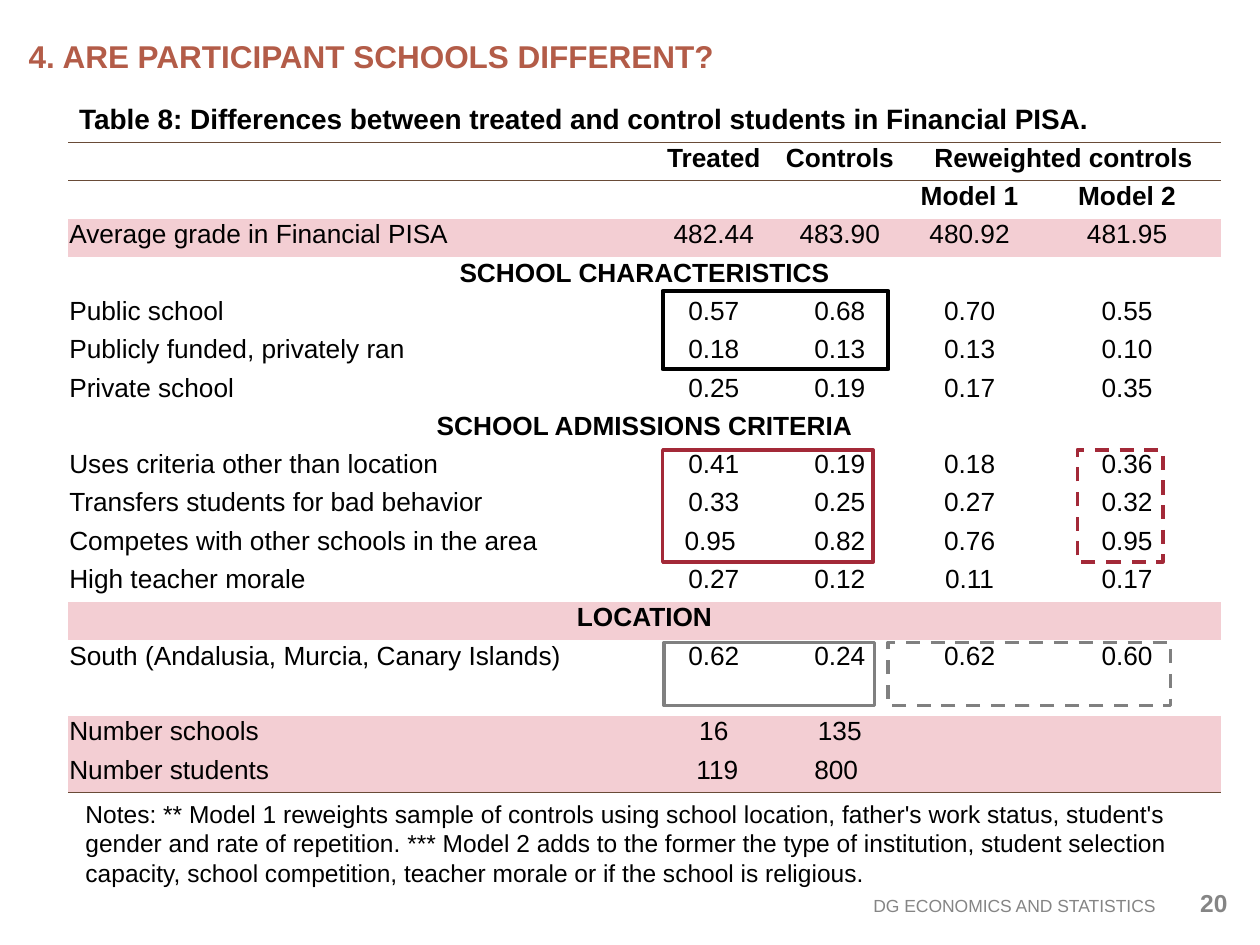
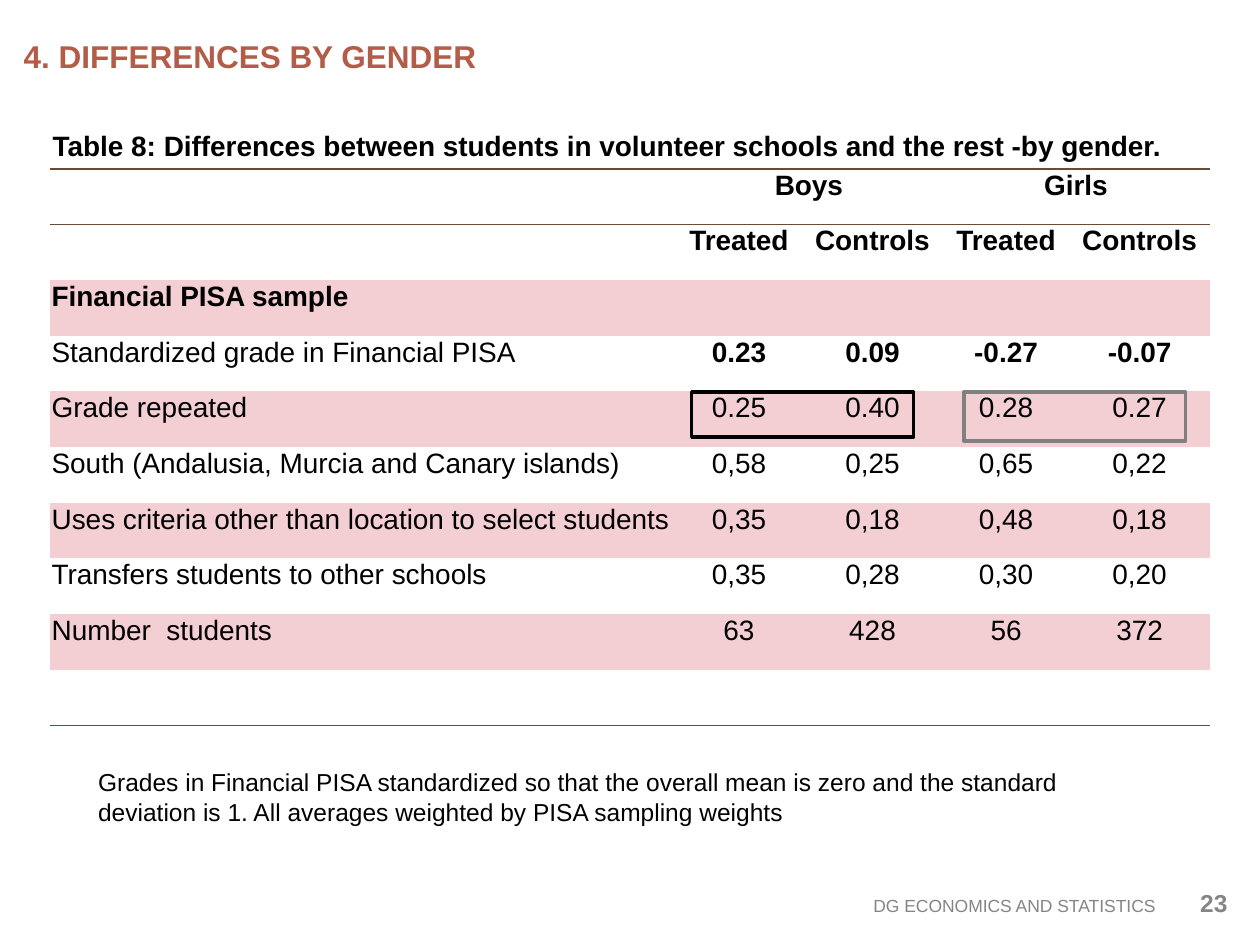
from lxml.etree import SubElement
from pptx import Presentation
from pptx.dml.color import RGBColor
from pptx.enum.dml import MSO_LINE
from pptx.enum.shapes import MSO_SHAPE
from pptx.enum.text import MSO_ANCHOR, PP_ALIGN
from pptx.oxml import parse_xml
from pptx.oxml.ns import nsdecls, qn
from pptx.util import Inches, Pt

COLORS = {
    "title": "B35C48", "text": "000000", "footer": "858585", "white": "FFFFFF",
    "band": "F3CED3", "rule": "694B37", "red": "A32938", "gray": "808080",
}
FONT = "Arial"
FOOTER = "DG ECONOMICS AND STATISTICS"
NO_STYLE = "{2D5ABB26-0587-4C30-8999-92F81FD0307C}"

ROW_STYLES = {
    "head": {"fill": "white", "bold": "all", "edges": ("T", "B")},
    "subhead": {"fill": "white", "bold": "all"},
    "section": {"bold": "all", "center": True},
    "band section": {"fill": "band", "bold": "all", "center": True},
    "band group": {"fill": "band", "bold": "all"},
    "plain": {},
    "strong": {"bold": "values"},
    "band": {"fill": "band"},
    "band last": {"fill": "band", "edges": ("B",)},
    "last": {"edges": ("B",)},
}

SLIDES = [
    {
        "title": "4. ARE PARTICIPANT SCHOOLS DIFFERENT?", "title_left": 0.13,
        "number": "20",
        "caption": "Table 8: Differences between treated and control students in Financial PISA.",
        "caption_at": (0.53, 0.76, 8.76, 0.37),
        "table_at": (0.54, 1.13, 9.15, 5.16),
        "size": 15,
        "cols": [4.65, 0.95, 1.05, 1.01, 1.49],
        "tall_rows": {13: 0.6},
        "rows": [
            ("head", ["", "Treated", "Controls", "Reweighted controls", None]),
            ("subhead", ["", "", "", "Model 1", "Model 2"]),
            ("band", ["Average grade in Financial PISA", "482.44", "483.90", "480.92", "481.95"]),
            ("section", ["SCHOOL CHARACTERISTICS", None, None, None, None]),
            ("plain", ["Public school", "0.57", "0.68", "0.70", "0.55"]),
            ("plain", ["Publicly funded, privately ran", "0.18", "0.13", "0.13", "0.10"]),
            ("plain", ["Private school", "0.25", "0.19", "0.17", "0.35"]),
            ("section", ["SCHOOL ADMISSIONS CRITERIA", None, None, None, None]),
            ("plain", ["Uses criteria other than location", "0.41", "0.19", "0.18", "0.36"]),
            ("plain", ["Transfers students for bad behavior", "0.33", "0.25", "0.27", "0.32"]),
            ("plain", ["Competes with other schools in the area", "0.95 ", "0.82", "0.76", "0.95"]),
            ("plain", ["High teacher morale", "0.27", "0.12", "0.11", "0.17"]),
            ("band section", ["LOCATION", None, None, None, None]),
            ("plain", ["South (Andalusia, Murcia, Canary Islands)", "0.62", "0.24", "0.62", "0.60"]),
            ("band", ["Number schools", "16", "135", "", ""]),
            ("band last", ["Number students", " 119", "800 ", "", ""]),
        ],
        "frames": [
            ((5.26, 3.57, 1.67, 0.89), "red", 2, False),
            ((5.27, 5.1, 1.67, 0.5), "gray", 2, False),
            ((8.55, 3.57, 0.68, 0.89), "red", 2, True),
            ((5.26, 2.31, 1.79, 0.62), "text", 2.5, False),
            ((7.05, 5.1, 2.24, 0.5), "gray", 2, True),
        ],
        "note": "Notes: ** Model 1 reweights sample of controls using school location, "
                "father's work status, student's gender and rate of repetition. *** Model 2 "
                "adds to the former the type of institution, student selection capacity, "
                "school competition, teacher morale or if the school is religious.",
        "note_at": (0.58, 6.29, 8.85, 0.81),
    },
    {
        "title": "4. DIFFERENCES BY GENDER", "title_left": 0.09,
        "number": "23",
        "caption": "Table 8: Differences between students in volunteer schools and the rest -by gender.",
        "caption_at": (0.32, 0.97, 9.36, 0.37),
        "table_at": (0.4, 1.34, 9.2, 4.42),
        "size": 16,
        "cols": [4.96, 1.01, 1.11, 1.01, 1.11],
        "tall_rows": {},
        "rows": [
            ("head", ["", "Boys", None, "Girls", None]),
            ("subhead", ["", "Treated", "Controls", "Treated", "Controls"]),
            ("band group", ["Financial PISA sample", None, None, None, None]),
            ("strong", ["Standardized grade in Financial PISA", "0.23", "0.09", "-0.27", "-0.07"]),
            ("band", ["Grade repeated", "0.25", "0.40", "0.28", "0.27"]),
            ("plain", ["South (Andalusia, Murcia and Canary islands)", "0,58", "0,25", "0,65", "0,22"]),
            ("band", ["Uses criteria other than location to select students", "0,35", "0,18", "0,48", "0,18"]),
            ("plain", ["Transfers students to other schools", "0,35", "0,28", "0,30", "0,20"]),
            ("band", ["Number  students", "63", "428", "56", "372"]),
            ("last", ["", "", "", "", ""]),
        ],
        "frames": [
            ((5.49, 3.11, 1.76, 0.36), "text", 2, False),
            ((7.65, 3.11, 1.76, 0.39), "gray", 2, False),
        ],
        "note": "Grades in Financial PISA standardized so that the overall mean is zero and "
                "the standard deviation is 1. All averages weighted by PISA sampling weights",
        "note_at": (0.68, 6.04, 8.59, 0.57),
    },
]


def rgb(name):
    return RGBColor.from_string(COLORS[name])


def inches(box):
    return [Inches(v) for v in box]


def write(tf, text, size=14, color="text", bold=False, align=PP_ALIGN.LEFT):
    p = tf.paragraphs[0]
    p.alignment = align
    if not text:
        SubElement(p._p, qn("a:endParaRPr"), sz=str(size * 100))
        return
    r = p.add_run()
    r.text = text
    r.font.name = FONT
    r.font.size = Pt(size)
    r.font.bold = bold
    r.font.color.rgb = rgb(color)


def add_text(s, box, text, anchor=MSO_ANCHOR.TOP, right=0.1, **fmt):
    tf = s.shapes.add_textbox(*inches(box)).text_frame
    tf.word_wrap = True
    tf.vertical_anchor = anchor
    tf.margin_right = Inches(right)
    write(tf, text, **fmt)


def add_edges(cell, edges):
    tcPr = cell._tc.get_or_add_tcPr()
    for i, edge in enumerate(edges):
        tcPr.insert(i, parse_xml(
            f'<a:ln{edge} {nsdecls("a")} w="12700"><a:solidFill>'
            f'<a:srgbClr val="{COLORS["rule"]}"/></a:solidFill></a:ln{edge}>'))


def add_data_table(s, data):
    rows, cols, tall = data["rows"], data["cols"], data["tall_rows"]
    frame = s.shapes.add_table(len(rows), len(cols), *inches(data["table_at"]))
    table = frame.table
    table.first_row = table.horz_banding = False
    table._tbl.tblPr.find(qn("a:tableStyleId")).text = NO_STYLE
    for column, width in zip(table.columns, cols):
        column.width = Inches(width)
    height = (data["table_at"][3] - sum(tall.values())) / (len(rows) - len(tall))
    for i, (kind, texts) in enumerate(rows):
        style = ROW_STYLES[kind]
        bold = style.get("bold")
        table.rows[i].height = Inches(tall.get(i, height))
        for j, text in enumerate(texts):
            cell = table.cell(i, j)
            cell.margin_left = cell.margin_right = cell.margin_top = Inches(0.01)
            cell.margin_bottom = 0
            centered = j > 0 or style.get("center")
            write(cell.text_frame, text, size=data["size"],
                  bold=bold == "all" or (bold == "values" and j > 0),
                  align=PP_ALIGN.CENTER if centered else PP_ALIGN.LEFT)
            if "fill" in style:
                cell.fill.solid()
                cell.fill.fore_color.rgb = rgb(style["fill"])
            else:
                cell.fill.background()
            add_edges(cell, style.get("edges", ()))
        starts = [j for j, text in enumerate(texts) if text is not None]
        for start, end in zip(starts, starts[1:] + [len(texts)]):
            if end - start > 1:
                table.cell(i, start).merge(table.cell(i, end - 1))


def add_frame(s, box, color, width, dashed):
    sp = s.shapes.add_shape(MSO_SHAPE.RECTANGLE, *inches(box))
    sp.shadow.inherit = False
    sp.fill.background()
    sp.line.color.rgb = rgb(color)
    sp.line.width = Pt(width)
    if dashed:
        sp.line.dash_style = MSO_LINE.DASH


def add_slide(prs, data):
    s = prs.slides.add_slide(prs.slide_layouts[6])
    add_text(s, (3.14, 7.05, 6.03, 0.27), FOOTER, anchor=MSO_ANCHOR.MIDDLE, right=0,
             size=10, color="footer", align=PP_ALIGN.RIGHT)
    add_text(s, (data["title_left"], 0.02, 6.8, 0.84), data["title"],
             anchor=MSO_ANCHOR.MIDDLE, size=18, color="title", bold=True)
    add_text(s, (9.27, 7, 0.57, 0.35), data["number"], color="footer", bold=True,
             align=PP_ALIGN.RIGHT)
    add_data_table(s, data)
    add_text(s, data["caption_at"], data["caption"], size=16, bold=True)
    for frame in data["frames"]:
        add_frame(s, *frame)
    add_text(s, data["note_at"], data["note"])


def main():
    prs = Presentation()
    prs.slide_width, prs.slide_height = Inches(10), Inches(7.5)
    for data in SLIDES:
        add_slide(prs, data)
    prs.save("out.pptx")


if __name__ == "__main__":
    main()
